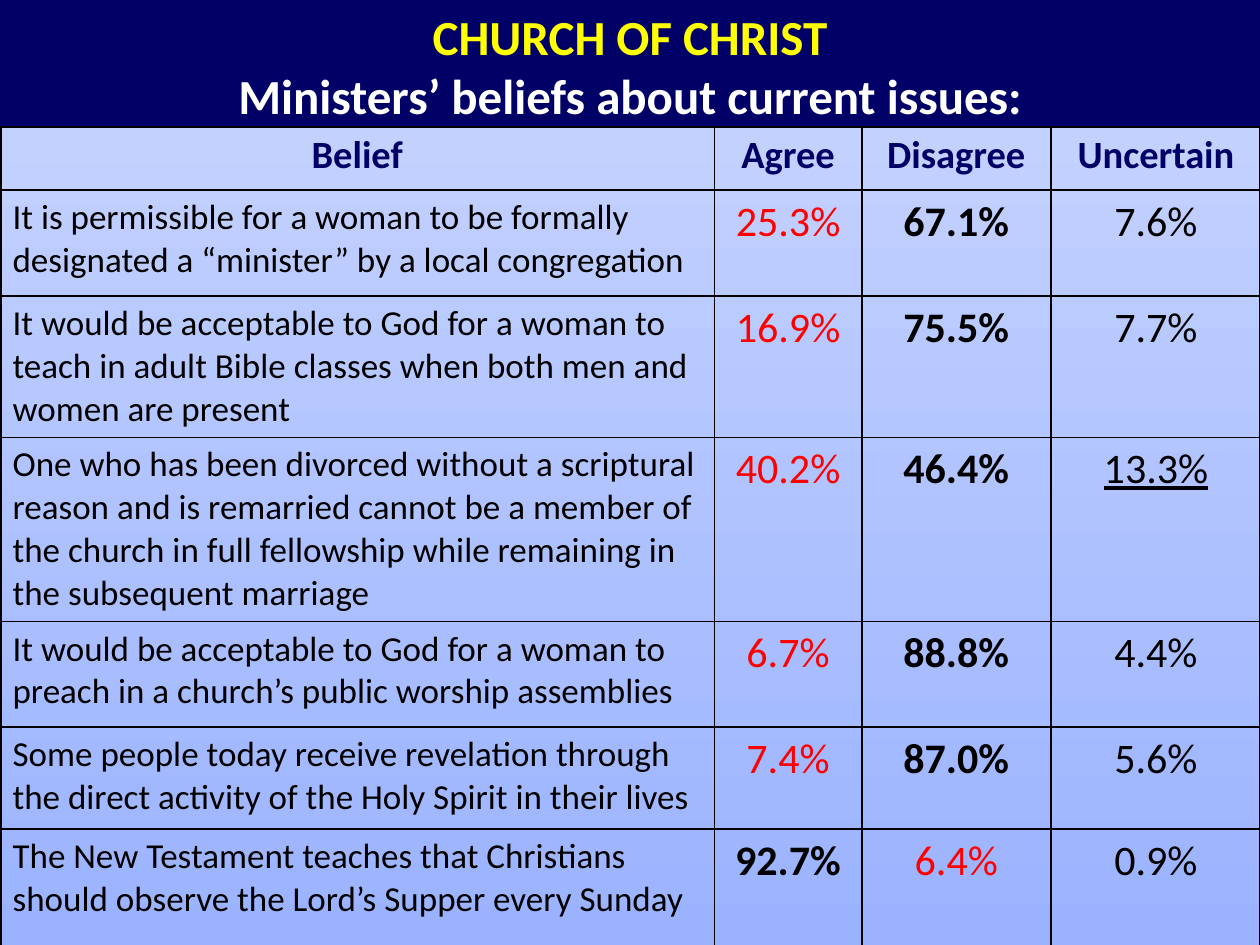
"""Build a slide that tabulates ministers' beliefs about current issues."""
from dataclasses import dataclass

from lxml.etree import SubElement
from pptx import Presentation
from pptx.dml.color import RGBColor
from pptx.enum.shapes import MSO_SHAPE
from pptx.enum.text import MSO_ANCHOR, MSO_AUTO_SIZE, PP_ALIGN
from pptx.oxml import parse_xml
from pptx.oxml.ns import nsdecls, qn
from pptx.util import Inches, Pt

NAVY = RGBColor(0x00, 0x00, 0x66)
BLACK = RGBColor(0x00, 0x00, 0x00)
RED = RGBColor(0xFF, 0x00, 0x00)
YELLOW = RGBColor(0xFF, 0xFF, 0x00)
WHITE = RGBColor(0xFF, 0xFF, 0xFF)
PALE_BLUE = RGBColor(0xC9, 0xD6, 0xFF)
MID_BLUE = RGBColor(0x9B, 0xB3, 0xFF)

FONT = "Calibri"
INNER_LINE, OUTER_LINE = Pt(1), Pt(2.25)
HEADERS = ("Belief", "Agree", "Disagree", "Uncertain")
COLUMN_WIDTHS = (5.67, 1.17, 1.5, 1.67)
HEADER_HEIGHT = 0.51


@dataclass(frozen=True)
class Belief:
    statement: str
    agree: float
    disagree: float
    uncertain: float
    height: float


@dataclass(frozen=True)
class TextStyle:
    size: int
    color: RGBColor = BLACK
    bold: bool = False
    underline: bool = False
    align: PP_ALIGN = PP_ALIGN.CENTER


HEADER = TextStyle(22, NAVY, bold=True)
STATEMENT = TextStyle(20, align=PP_ALIGN.LEFT)
MAJORITY = TextStyle(24, bold=True)
MINORITY = TextStyle(24, RED)
UNCERTAIN = TextStyle(24)
NOTABLY_UNCERTAIN = TextStyle(24, underline=True)

BELIEFS = (
    Belief("It is permissible for a woman to be formally designated a “minister” "
           "by a local congregation", 25.3, 67.1, 7.6, 0.84),
    Belief("It would be acceptable to God for a woman to teach in adult Bible "
           "classes when both men and women are present", 16.9, 75.5, 7.7, 1.11),
    Belief("One who has been divorced without a scriptural reason and is remarried "
           "cannot be a member of the church in full fellowship while remaining in "
           "the subsequent marriage", 40.2, 46.4, 13.3, 1.45),
    Belief("It would be acceptable to God for a woman to preach in a church’s "
           "public worship assemblies", 6.7, 88.8, 4.4, 0.84),
    Belief("Some people today receive revelation through the direct activity of "
           "the Holy Spirit in their lives", 7.4, 87.0, 5.6, 0.81),
    Belief("The New Testament teaches that Christians should observe the Lord’s "
           "Supper every Sunday", 92.7, 6.4, 0.9, 1.1),
)


def format_paragraph(paragraph, style: TextStyle) -> None:
    """Apply a text style to a whole paragraph."""
    paragraph.alignment = style.align
    font = paragraph.font
    font.name = FONT
    font.size = Pt(style.size)
    font.bold = style.bold
    font.underline = style.underline
    font.color.rgb = style.color


def set_borders(cell, widths: dict[str, int]) -> None:
    """Draw the four black borders of a cell."""
    properties = cell._tc.get_or_add_tcPr()
    for position, (side, width) in enumerate(widths.items()):
        line = parse_xml(f'<a:ln{side} {nsdecls("a")} w="{int(width)}"/>')
        fill = SubElement(line, qn("a:solidFill"))
        SubElement(fill, qn("a:srgbClr"), val=str(BLACK))
        properties.insert(position, line)


def fill_cell(cell, text: str, style: TextStyle) -> None:
    """Write styled text with proportional space before into a clear cell."""
    cell.fill.background()
    cell.text = text
    paragraph = cell.text_frame.paragraphs[0]
    format_paragraph(paragraph, style)
    spacing = parse_xml(f'<a:spcBef {nsdecls("a")}><a:spcPct val="20000"/></a:spcBef>')
    paragraph._p.get_or_add_pPr().insert(0, spacing)


def belief_cells(belief: Belief) -> list[tuple[str, TextStyle]]:
    """Pair each text of a belief row with its style."""
    agreed = belief.agree > belief.disagree
    return [
        (belief.statement, STATEMENT),
        (f"{belief.agree:.1f}%", MAJORITY if agreed else MINORITY),
        (f"{belief.disagree:.1f}%", MINORITY if agreed else MAJORITY),
        (f"{belief.uncertain:.1f}%",
         NOTABLY_UNCERTAIN if belief.uncertain > 10 else UNCERTAIN),
    ]


def add_belief_table(slide) -> None:
    """Add the table of beliefs and responses."""
    rows = [[(header, HEADER) for header in HEADERS], *map(belief_cells, BELIEFS)]
    heights = [HEADER_HEIGHT, *(belief.height for belief in BELIEFS)]
    table = slide.shapes.add_table(
        len(rows), len(HEADERS), 0, Inches(1), Inches(10), Inches(sum(heights))
    ).table
    table.first_row = table.horz_banding = False
    for column, width in zip(table.columns, COLUMN_WIDTHS):
        column.width = Inches(width)
    for r, (cells, height) in enumerate(zip(rows, heights)):
        table.rows[r].height = Inches(height)
        for c, (text, style) in enumerate(cells):
            cell = table.cell(r, c)
            fill_cell(cell, text, style)
            outer = {"L": c == 0, "R": c == len(HEADERS) - 1,
                     "T": r == 0, "B": r == len(rows) - 1}
            set_borders(cell, {side: OUTER_LINE if edge else INNER_LINE
                               for side, edge in outer.items()})


def add_title_band(slide) -> None:
    """Add the navy band behind the title."""
    band = slide.shapes.add_shape(MSO_SHAPE.RECTANGLE, 0, 0, Inches(10), Inches(1))
    band.shadow.inherit = False
    band.fill.solid()
    band.fill.fore_color.rgb = NAVY
    band.line.fill.background()


def place_title(slide) -> None:
    """Write the two-line title and bring it in front of the band."""
    title = slide.shapes.title
    title.left, title.top, title.width, title.height = 0, 0, Inches(10), Inches(1.03)
    frame = title.text_frame
    frame.text = "CHURCH OF CHRIST\nMinisters’ beliefs about current issues:"
    frame.word_wrap = True
    frame.auto_size = MSO_AUTO_SIZE.SHAPE_TO_FIT_TEXT
    frame.vertical_anchor = MSO_ANCHOR.TOP
    for paragraph, color in zip(frame.paragraphs, (YELLOW, WHITE)):
        format_paragraph(paragraph, TextStyle(28, color, bold=True))
    slide.shapes._spTree.append(title._element)


def set_background(slide) -> None:
    """Shade the slide from pale blue down to mid blue."""
    fill = slide.background.fill
    fill.gradient()
    fill.gradient_angle = 270
    for stop, color in zip(fill.gradient_stops, (PALE_BLUE, MID_BLUE)):
        stop.color.rgb = color


def main() -> None:
    """Build and save the presentation."""
    presentation = Presentation()
    presentation.slide_width, presentation.slide_height = Inches(10), Inches(7.5)
    slide = presentation.slides.add_slide(presentation.slide_layouts[5])
    set_background(slide)
    add_belief_table(slide)
    add_title_band(slide)
    place_title(slide)
    presentation.save("out.pptx")


if __name__ == "__main__":
    main()
